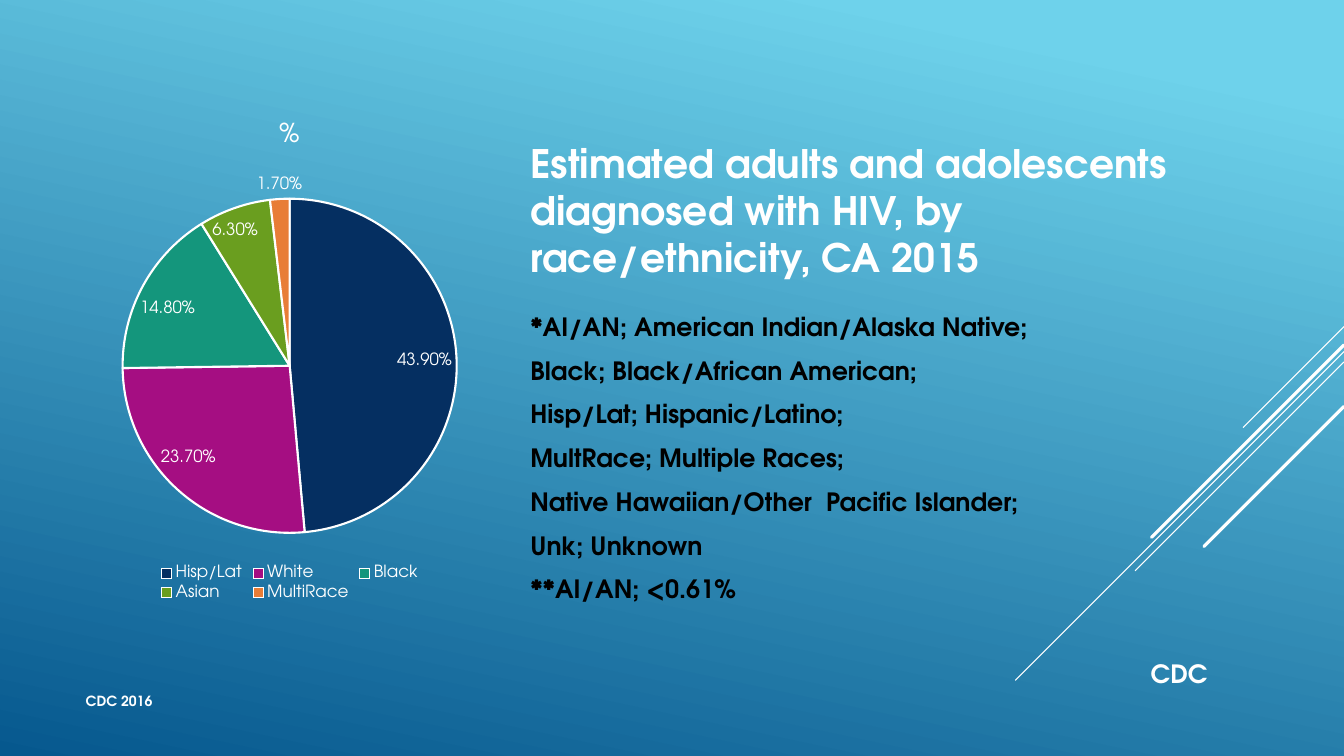
"""Build the slide on HIV diagnoses by race and ethnicity in California."""
from lxml.etree import SubElement as Sub
from pptx import Presentation
from pptx.chart.data import CategoryChartData as Data
from pptx.dml.color import RGBColor
from pptx.enum.chart import XL_CHART_TYPE as Kind
from pptx.enum.chart import XL_LABEL_POSITION as Spot
from pptx.enum.chart import XL_LEGEND_POSITION as Side
from pptx.enum.shapes import MSO_CONNECTOR as Link
from pptx.enum.text import MSO_ANCHOR as Anchor
from pptx.enum.text import MSO_AUTO_SIZE as Fit
from pptx.enum.text import PP_ALIGN as Align
from pptx.oxml.ns import qn
from pptx.util import Cm, Pt

WHITE = "FFFFFF"


def tint(color, code):
    color.rgb = RGBColor.from_string(code)


def style(font, size, code=WHITE, bold=True):
    font.name = "TeX Gyre Adventor"
    font.size = Pt(size)
    font.bold = bold
    tint(font.color, code)


deck = Presentation()
deck.slide_width, deck.slide_height = Cm(33.87), Cm(19.05)
slide = deck.slides.add_slide(deck.slide_layouts[1])
shapes = slide.shapes

fill = slide.background.fill
fill.gradient()
fill.gradient_angle = 258
for stop, (place, code) in zip(fill.gradient_stops, [(0.1, "6ED2EB"), (1, "06588E")]):
    stop.position = place
    tint(stop.color, code)

right = 33.87
for top, run, width in [
    (8.23, 2.54, 0.75),
    (8.86, 8.28, 0.75),
    (9.12, 5.26, 0.75),
    (8.69, 4.85, 2.25),
    (10.24, 3.53, 2.25),
]:
    ray = shapes.add_connector(
        Link.STRAIGHT, Cm(right), Cm(top), Cm(right - run), Cm(top + run))
    ray.line.width = Pt(width)
    tint(ray.line.color, WHITE)
    ray.get_or_add_ln().set("cap", "rnd")
    Sub(ray.element.spPr, qn("a:effectLst"))

title = shapes.title
title.left, title.top, title.width, title.height = Cm(13.11), Cm(4.01), Cm(16.71), Cm(3.18)
frame = title.text_frame
frame.auto_size = Fit.NONE
frame.vertical_anchor = Anchor.BOTTOM
para = frame.paragraphs[0]
para.alignment = Align.LEFT
run = para.add_run()
run.text = "Estimated adults and adolescents diagnosed with HIV, by race/ethnicity, CA 2015"
style(run.font, 28)

notes = [
    "*AI/AN; American Indian/Alaska Native;",
    "Black; Black/African American;",
    "Hisp/Lat; Hispanic/Latino;",
    "MultRace; Multiple Races;",
    "Native Hawaiian/Other  Pacific Islander;",
    "Unk; Unknown",
    "**AI/AN; <0.61%",
]
body = slide.placeholders[1]
body.left, body.top, body.width, body.height = Cm(13.11), Cm(7.72), Cm(16.74), Cm(8.03)
frame = body.text_frame
frame.auto_size = Fit.NONE
for i, note in enumerate(notes):
    para = frame.add_paragraph() if i else frame.paragraphs[0]
    para.space_after = Pt(6)
    props = para._p.get_or_add_pPr()
    props.set("marL", "0")
    props.set("indent", "0")
    Sub(props, qn("a:buNone"))
    run = para.add_run()
    run.text = note
    style(run.font, 18, "000000")

groups = [
    ("Hisp/Lat", 0.439, "052F61"),
    ("White", 0.237, "A50E82"),
    ("Black", 0.148, "14967C"),
    ("Asian", 0.063, "6A9E1F"),
    ("MultiRace", 0.017, "E87D37"),
]
names, shares, codes = zip(*groups)
data = Data(number_format="0.00%")
data.categories = names
data.add_series("%", shares)
chart = shapes.add_chart(
    Kind.PIE, Cm(2.74), Cm(2.54), Cm(9.12), Cm(12.7), data).chart
style(chart.font, 10, bold=False)
chart.has_title = True
run = chart.chart_title.text_frame.paragraphs[0].add_run()
run.text = "%"
style(run.font, 18.6, bold=False)
chart.chart_title.include_in_layout = False
chart.has_legend = True
chart.legend.position = Side.BOTTOM
chart.legend.include_in_layout = False
style(chart.legend.font, 12, bold=False)

pie = chart.plots[0]
pie.vary_by_categories = True
for i, code in enumerate(codes):
    part = pie.series[0].points[i].format
    part.fill.solid()
    tint(part.fill.fore_color, code)
    part.line.width = Pt(1.5)
    tint(part.line.color, WHITE)
pie.has_data_labels = True
labels = pie.data_labels
labels.show_value = True
labels.show_percentage = False
labels.number_format = "0.00%"
labels.number_format_is_linked = False
labels.position = Spot.BEST_FIT
style(labels.font, 12, bold=False)

for text, left, top, width, size, wrap in [
    ("CDC 2016", 1.91, 17.15, 20.96, 10, True),
    ("CDC", 28.75, 16.46, 2.03, 18, False),
]:
    box = shapes.add_textbox(Cm(left), Cm(top), Cm(width), Cm(1.02))
    frame = box.text_frame
    frame.word_wrap = wrap
    frame.vertical_anchor = Anchor.MIDDLE if wrap else Anchor.TOP
    frame.auto_size = Fit.NONE if wrap else Fit.SHAPE_TO_FIT_TEXT
    run = frame.paragraphs[0].add_run()
    run.text = text
    style(run.font, size)

deck.save("out.pptx")
